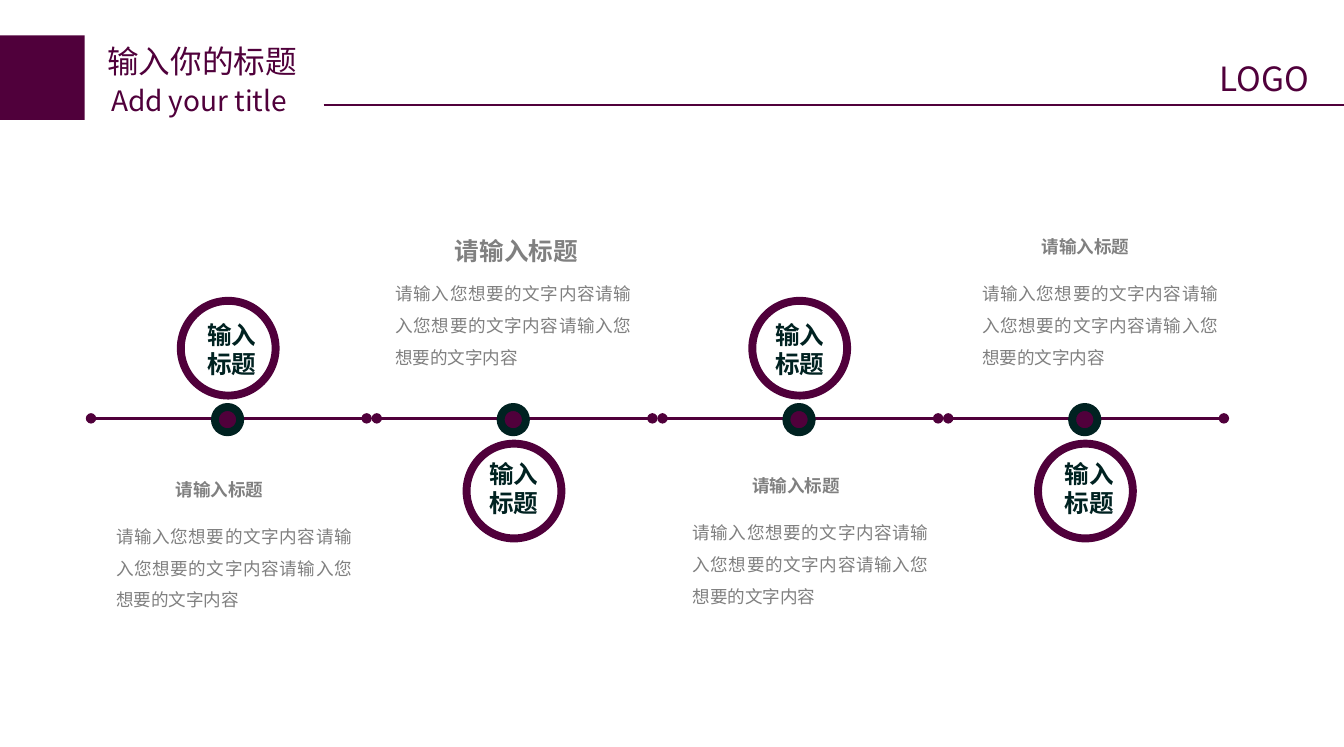
from dataclasses import dataclass

from lxml.etree import SubElement
from pptx import Presentation
from pptx.dml.color import RGBColor
from pptx.enum.shapes import MSO_CONNECTOR, MSO_SHAPE
from pptx.enum.text import MSO_AUTO_SIZE, PP_ALIGN
from pptx.oxml.ns import qn
from pptx.util import Inches, Pt


@dataclass(frozen=True)
class Theme:
    plum: RGBColor = RGBColor.from_string("50003B")
    dark: RGBColor = RGBColor.from_string("002221")
    gray: RGBColor = RGBColor.from_string("808080")
    sans: str = "Noto Sans CJK SC"
    latin: str = "Arial"
    title: int = 18
    sub: int = 16
    logo: int = 19
    large: int = 14
    small: int = 10
    thin: float = 0.75
    track: float = 1.5
    ring: float = 4.5


theme = Theme()
deck = Presentation()
deck.slide_width = Inches(10.63)
deck.slide_height = Inches(5.91)
slide = deck.slides.add_slide(deck.slide_layouts[6])


def write(text, x, y, w, h, size, color, font=theme.sans, bold=False,
          align=PP_ALIGN.LEFT, space=1.0, inset=True, wrap=True):
    box = slide.shapes.add_textbox(Inches(x), Inches(y), Inches(w), Inches(h))
    frame = box.text_frame
    frame.word_wrap = wrap
    frame.auto_size = MSO_AUTO_SIZE.SHAPE_TO_FIT_TEXT
    if not inset:
        frame.margin_left = frame.margin_right = 0
        frame.margin_top = frame.margin_bottom = 0
    frame.text = text
    for para in frame.paragraphs:
        para.alignment = align
        para.line_spacing = space
        for run in para.runs:
            run.font.name = font
            run.font.size = Pt(size)
            run.font.bold = bold
            run.font.color.rgb = color
            SubElement(run.font._element, qn("a:ea"), typeface=theme.sans)


def draw(form, x, y, size, fill=None, edge=None):
    shape = slide.shapes.add_shape(
        form, Inches(x), Inches(y), Inches(size), Inches(size))
    shape.shadow.inherit = False
    if fill is None:
        shape.fill.background()
    else:
        shape.fill.solid()
        shape.fill.fore_color.rgb = fill
    if edge is None:
        shape.line.fill.background()
    else:
        shape.line.color.rgb = edge
        shape.line.width = Pt(theme.ring)


draw(MSO_SHAPE.RECTANGLE, 0, 0.28, 0.67, fill=theme.plum)
write("输入你的标题", 0.75, 0.28, 1.73, 0.4, theme.title, theme.plum)
write("Add your title", 0.78, 0.61, 1.73, 0.37, theme.sub, theme.plum)
write("LOGO", 9.55, 0.41, 0.96, 0.42, theme.logo, theme.plum, wrap=False)

pitch = 2.26
tracks = [(2.9 + i * pitch, 0.72 + i * pitch, 3.31, theme.track, True)
          for i in range(4)]
rules = [(2.56, 10.63, 0.83, theme.thin, False)] + tracks
for start, end, y, width, dots in rules:
    line = slide.shapes.add_connector(
        MSO_CONNECTOR.STRAIGHT, Inches(start), Inches(y), Inches(end), Inches(y))
    line.line.color.rgb = theme.plum
    line.line.width = Pt(width)
    if dots:
        for tip in ("a:headEnd", "a:tailEnd"):
            SubElement(line.line._get_or_add_ln(), qn(tip), type="oval")
    SubElement(line._element.spPr, qn("a:effectLst"))

body = "请输入您想要的文字内容" * 3
steps = [
    (1.51, 1.29, 3.74, theme.small),
    (3.74, 3.5, 1.82, theme.large),
    (6.0, 5.85, 3.71, theme.small),
    (8.29, 8.14, 1.82, theme.small),
]
for i, (label, left, top, size) in enumerate(steps):
    ring, name = (3.51, 3.63) if i % 2 else (2.38, 2.53)
    draw(MSO_SHAPE.OVAL, 1.7 + i * pitch, 3.22, 0.2, theme.plum, theme.dark)
    draw(MSO_SHAPE.OVAL, 1.43 + i * pitch, ring, 0.75, edge=theme.plum)
    write("输入\n标题", label, name, 0.65, 0.47, theme.large, theme.dark,
          bold=True, align=PP_ALIGN.CENTER, inset=False)
    write("请输入标题", left, top, 1.35, 0.27, size, theme.gray, bold=True)
    write(body, left - 0.47, top + 0.29, 2.06, 0.85, theme.small, theme.gray,
          font=theme.latin, align=PP_ALIGN.JUSTIFY, space=1.5)

deck.save("out.pptx")
